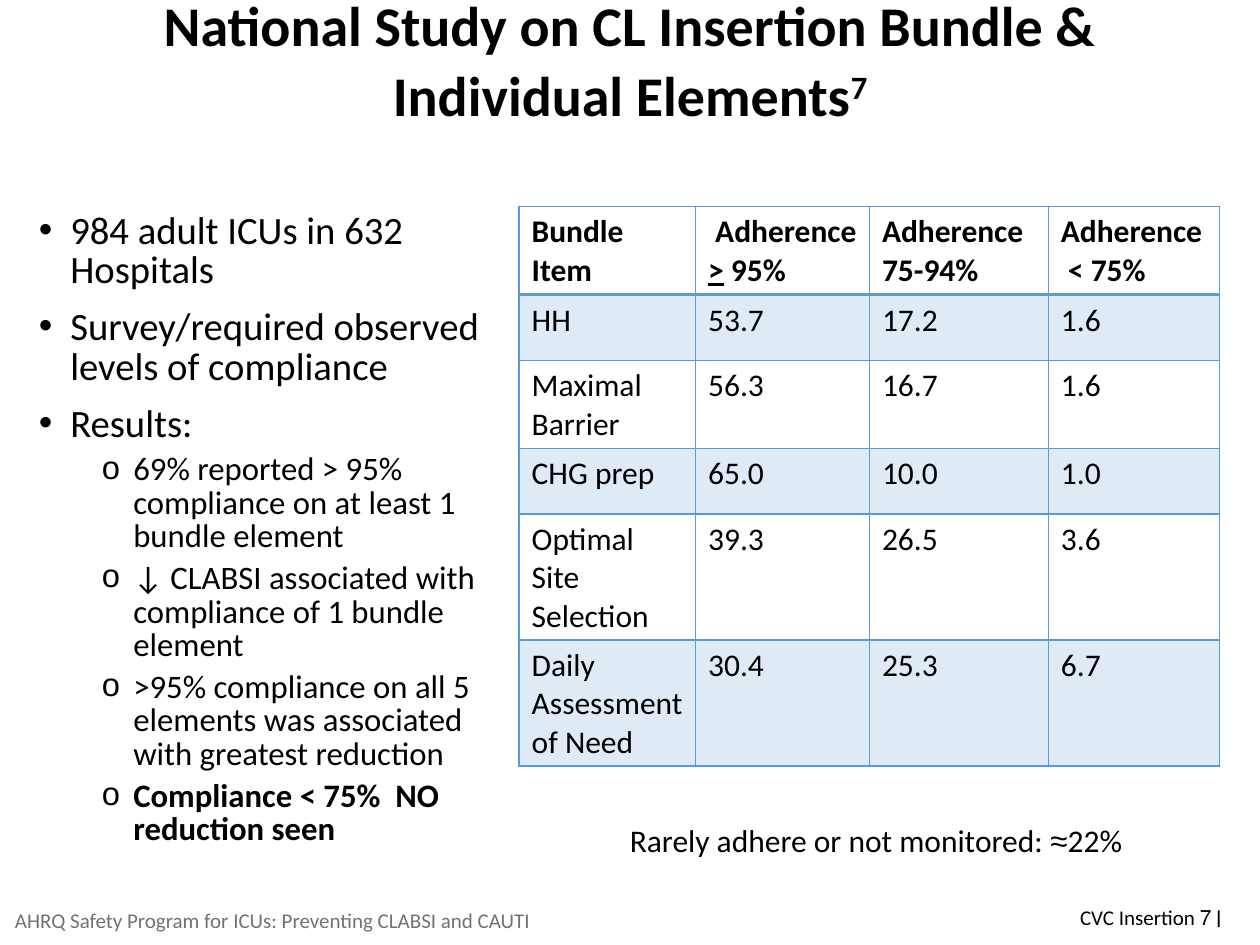
import pptx
import pptx.util
import pptx.dml.color
import pptx.enum.text
import pptx.oxml
import pptx.oxml.ns

W, H = 10, 7.5
BLACK, GREY, BLUE, PALE = "000000", "767171", "5B9BD5", "DEEBF7"
ALIGN = pptx.enum.text.PP_ALIGN
MIDDLE = pptx.enum.text.MSO_ANCHOR.MIDDLE

TITLE = [("National Study on CL Insertion Bundle & Individual Elements", {}),
         ("7", {"baseline": "30000"})]
BULLETS = [
    (0, "984 adult ICUs in 632 Hospitals", False),
    (0, "Survey/required observed levels of compliance", False),
    (0, "Results:", False),
    (1, "69% reported > 95% compliance on at least 1 bundle element", False),
    (1, "↓ CLABSI associated with compliance of 1 bundle element", False),
    (1, ">95% compliance on all 5 elements was associated with greatest reduction", False),
    (1, "Compliance < 75%  NO reduction seen", True),
]
LEVELS = [
    {"mark": "•", "indent": 0.25, "size": 22.1, "before": 10},
    {"mark": "o", "indent": 0.75, "size": 18.7, "before": 5},
]
HEADER = [
    [[("Bundle Item", {})]],
    [[(" Adherence ", {}), (">", {"u": "sng"}), (" 95%", {})]],
    [[("Adherence", {})], [("75-94%", {})]],
    [[("Adherence  < 75%", {})]],
]
ROWS = [
    ("HH", "53.7", "17.2", "1.6"),
    ("Maximal Barrier", "56.3", "16.7", "1.6"),
    ("CHG prep", "65.0", "10.0", "1.0"),
    ("Optimal Site Selection", "39.3", "26.5", "3.6"),
    ("Daily Assessment of Need", "30.4", "25.3", "6.7"),
]
COLUMNS = [1.4, 1.38, 1.42, 1.36]
ROW_HEIGHT = 0.52
TOP = 1.64
NOTE = [("Rarely adhere or not monitored: ", {}), ("≈", {"font": "Arial"}), ("22%", {})]
PROGRAM = [("AHRQ Safety Program for ICUs: Preventing CLABSI and CAUTI", {})]
PAGE = [("CVC Insertion ", {}), ("׀ ", {"font": "Arial"}), ("7", {})]


def rgb(value):
    return pptx.dml.color.RGBColor.from_string(value)


def inches(*values):
    return [pptx.util.Inches(v) for v in values]


def add_runs(p, runs, size, color=BLACK, bold=False):
    for text, extra in runs:
        r = p.add_run()
        r.text = text
        r.font.name = extra.get("font", "Calibri")
        r.font.size = pptx.util.Pt(size)
        r.font.bold = bold
        r.font.color.rgb = rgb(color)
        for key in ("baseline", "u"):
            if key in extra:
                r.font._element.set(key, extra[key])


def add_box(slide, box, wrap=True, anchor=None):
    tf = slide.shapes.add_textbox(*inches(*box)).text_frame
    tf.word_wrap = wrap
    if anchor is not None:
        tf.vertical_anchor = anchor
    return tf


def add_line(slide, box, runs, size, align, color=BLACK, bold=False, wrap=True, anchor=MIDDLE):
    p = add_box(slide, box, wrap, anchor).paragraphs[0]
    p.alignment = align
    add_runs(p, runs, size, color, bold)
    return p


def add_bullets(slide, box):
    tf = add_box(slide, box)
    for i, (level, text, bold) in enumerate(BULLETS):
        style = LEVELS[level]
        p = tf.add_paragraph() if i else tf.paragraphs[0]
        p.level = level
        pPr = p._p.get_or_add_pPr()
        pPr.set("marL", str(pptx.util.Inches(style["indent"])))
        pPr.set("indent", str(pptx.util.Inches(-0.25)))
        for tag, key, value in (("buFont", "typeface", "Arial"), ("buChar", "char", style["mark"])):
            pPr.append(pptx.oxml.parse_xml(
                f'<a:{tag} {pptx.oxml.ns.nsdecls("a")} {key}="{value}"/>'))
        p.line_spacing = 0.85
        p.space_before = pptx.util.Pt(style["before"] if i else 0)
        add_runs(p, [(text, {})], style["size"], bold=bold)


def set_borders(cell, widths):
    tcPr = cell._tc.get_or_add_tcPr()
    for side, width in zip("LRTB", widths):
        tcPr.append(pptx.oxml.parse_xml(
            f'<a:ln{side} {pptx.oxml.ns.nsdecls("a")} w="{pptx.util.Pt(width)}">'
            f'<a:solidFill><a:srgbClr val="{BLUE}"/></a:solidFill></a:ln{side}>'))


def add_adherence_table(slide, left, top):
    body = [[[[(text, {})]] for text in row] for row in ROWS]
    grid = [HEADER] + body
    size = inches(left, top, sum(COLUMNS), ROW_HEIGHT * len(grid))
    table = slide.shapes.add_table(len(grid), len(COLUMNS), *size).table
    table.first_row = table.horz_banding = False
    for column, width in zip(table.columns, COLUMNS):
        column.width = pptx.util.Inches(width)
    for i, row in enumerate(grid):
        for j, paragraphs in enumerate(row):
            cell = table.cell(i, j)
            set_borders(cell, (1, 1, 2 if i == 1 else 1, 2 if i == 0 else 1))
            if i % 2:
                cell.fill.solid()
                cell.fill.fore_color.rgb = rgb(PALE)
            else:
                cell.fill.background()
            tf = cell.text_frame
            for k, runs in enumerate(paragraphs):
                p = tf.add_paragraph() if k else tf.paragraphs[0]
                add_runs(p, runs, 18, bold=i == 0)


def main():
    prs = pptx.Presentation()
    prs.slide_width, prs.slide_height = inches(W, H)
    slide = prs.slides.add_slide(prs.slide_layouts[6])
    title = add_line(slide, (0.69, 0.01, W - 2 * 0.69, 0.89), TITLE, 32, ALIGN.CENTER, bold=True)
    title.line_spacing = 1.05
    add_bullets(slide, (0.21, TOP, 3.75, 5.26))
    add_adherence_table(slide, 4.12, TOP)
    add_line(slide, (4.9, 6.47, 4.19, 0.4), NOTE, 18, ALIGN.LEFT, wrap=False, anchor=None)
    add_line(slide, (0, H - 0.4, 4.33, 0.4), PROGRAM, 12, ALIGN.CENTER, GREY)
    add_line(slide, (7.54, 7.08, 2.25, 0.4), PAGE, 12, ALIGN.RIGHT)
    prs.save("out.pptx")


if __name__ == "__main__":
    main()
